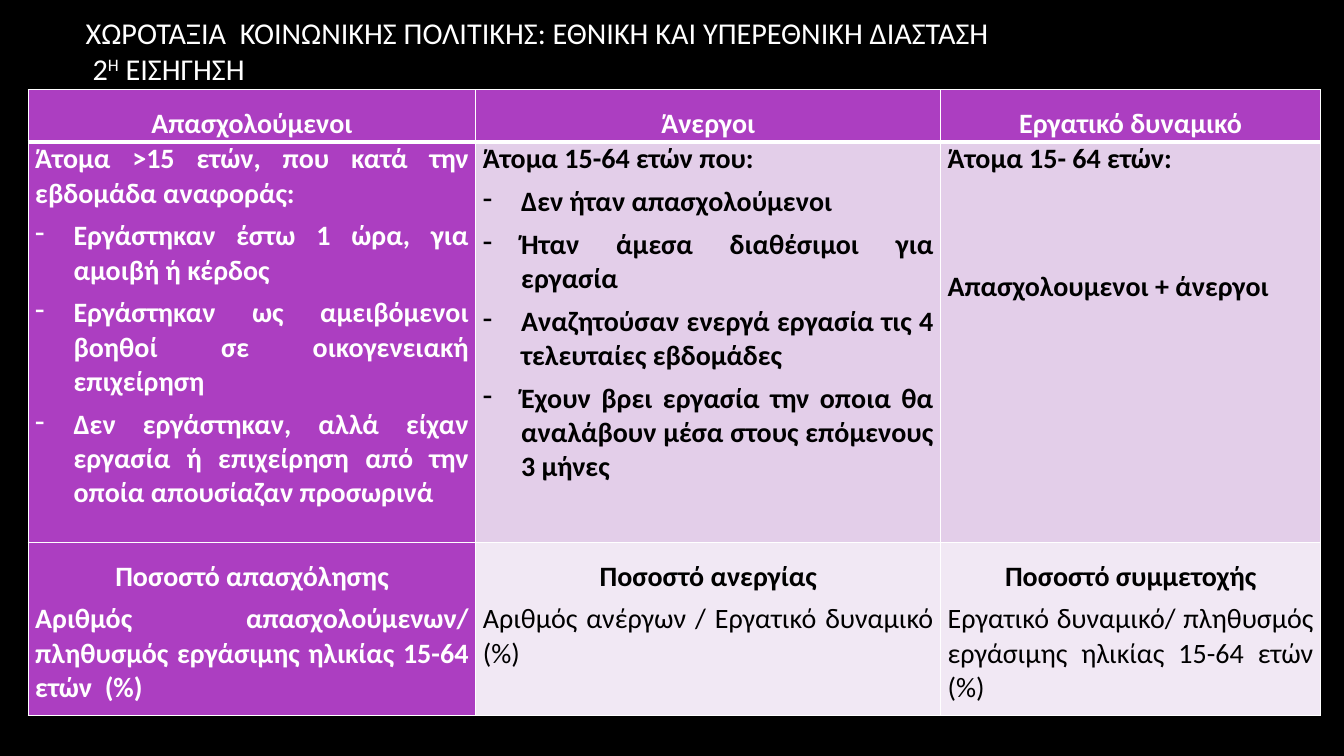
import pptx
import pptx.util
import pptx.dml.color
import pptx.enum.text
import pptx.oxml.ns
from lxml import etree
from dataclasses import dataclass

Inches, Pt = pptx.util.Inches, pptx.util.Pt
ALIGN, ANCHOR = pptx.enum.text.PP_ALIGN, pptx.enum.text.MSO_ANCHOR
qn = pptx.oxml.ns.qn


@dataclass(frozen=True)
class Theme:
    font: str = "Calibri"
    title_size: float = 21.6
    body_size: float = 20
    black: str = "000000"
    white: str = "FFFFFF"
    purple: str = "AC3EC1"
    lilac: str = "E3CEE9"
    pale: str = "F1E8F4"


T = Theme()


@dataclass(frozen=True)
class Para:
    text: str
    kind: str = "body"  # heading, body or bullet
    bold: bool = True
    before: float = 0


HEADERS = ["Απασχολούμενοι", "Άνεργοι", "Εργατικό δυναμικό"]

DEFINITIONS = [
    [Para("Άτομα >15 ετών, που κατά την εβδομάδα αναφοράς:"),
     Para("Εργάστηκαν έστω 1 ώρα, για αμοιβή ή κέρδος", "bullet"),
     Para("Εργάστηκαν ως αμειβόμενοι βοηθοί σε οικογενειακή επιχείρηση", "bullet"),
     Para("Δεν εργάστηκαν, αλλά είχαν εργασία ή επιχείρηση από την οποία "
          "απουσίαζαν προσωρινά", "bullet")],
    [Para("Άτομα 15-64 ετών που:"),
     Para("Δεν ήταν απασχολούμενοι", "bullet"),
     Para("Ήταν άμεσα διαθέσιμοι για εργασία", "bullet"),
     Para("Αναζητούσαν ενεργά εργασία τις 4 τελευταίες εβδομάδες", "bullet"),
     Para("Έχουν βρει εργασία την οποια θα αναλάβουν μέσα στους επόμενους 3 μήνες",
          "bullet")],
    [Para("Άτομα 15- 64 ετών:"),
     Para("Απασχολουμενοι + άνεργοι", before=61)],
]

RATES = [
    [Para("Ποσοστό απασχόλησης", "heading"),
     Para("Αριθμός απασχολούμενων/ πληθυσμός εργάσιμης ηλικίας 15-64 ετών  (%)")],
    [Para("Ποσοστό ανεργίας", "heading"),
     Para("Αριθμός ανέργων / Εργατικό δυναμικό (%)", bold=False)],
    [Para("Ποσοστό συμμετοχής", "heading"),
     Para("Εργατικό δυναμικό/ πληθυσμός εργάσιμης ηλικίας 15-64 ετών (%)", bold=False)],
]

ROWS = [[[Para(h, "heading")] for h in HEADERS], DEFINITIONS, RATES]
ROW_FILLS = [T.purple, T.lilac, T.pale]
COL_WIDTHS = [4.44, 4.61, 3.77]
ROW_HEIGHTS = [0.52, 3.97, 1.72]


def rgb(value):
    return pptx.dml.color.RGBColor.from_string(value)


def set_attrs(obj, values):
    for name, value in values.items():
        setattr(obj, name, value)


def style_font(font, size, color, bold=False):
    set_attrs(font, {"name": T.font, "size": Pt(size), "bold": bold})
    font.color.rgb = rgb(color)


def add_title(s, x, y, w, h):
    title = s.shapes.title
    set_attrs(title, {"left": Inches(x), "top": Inches(y),
                      "width": Inches(w), "height": Inches(h)})
    tf = title.text_frame
    set_attrs(tf, {"word_wrap": True, "vertical_anchor": ANCHOR.MIDDLE,
                   "auto_size": pptx.enum.text.MSO_AUTO_SIZE.NONE})
    p = tf.paragraphs[0]
    p.alignment = ALIGN.LEFT

    def add_run(text):
        r = p.add_run()
        r.text = text
        style_font(r.font, T.title_size, T.white)
        return r

    add_run("ΧΩΡΟΤΑΞΙΑ  ΚΟΙΝΩΝΙΚΗΣ ΠΟΛΙΤΙΚΗΣ: ΕΘΝΙΚΗ ΚΑΙ ΥΠΕΡΕΘΝΙΚΗ ΔΙΑΣΤΑΣΗ")
    p.add_line_break()
    add_run(" 2")
    add_run("Η").font._element.set("baseline", "30000")
    add_run(" ΕΙΣΗΓΗΣΗ")


def add_dash(p):
    pPr = p._p.get_or_add_pPr()
    pPr.set("marL", str(Inches(0.38)))
    pPr.set("indent", str(-Inches(0.38)))
    etree.SubElement(pPr, qn("a:buChar"), char="-")


def fill_text(tf, paras, color):
    tf.word_wrap = True
    for i, item in enumerate(paras):
        p = tf.paragraphs[0] if i == 0 else tf.add_paragraph()
        if item.kind == "bullet":
            add_dash(p)
        heading = item.kind == "heading"
        set_attrs(p, {"alignment": ALIGN.CENTER if heading else ALIGN.JUSTIFY,
                      "line_spacing": 1.5 if heading else 1.0,
                      "space_after": Pt(6)})
        if item.before:
            p.space_before = Pt(item.before)
        r = p.add_run()
        r.text = item.text
        style_font(r.font, T.body_size, color, item.bold)


def set_borders(cell, widths):
    tcPr = cell._tc.get_or_add_tcPr()
    for i, (side, width) in enumerate(widths.items()):
        ln = etree.Element(qn("a:ln" + side), w=str(Pt(width)))
        fill = etree.SubElement(ln, qn("a:solidFill"))
        etree.SubElement(fill, qn("a:srgbClr"), val=T.white)
        tcPr.insert(i, ln)


def add_labour_table(s, x, y, w, h):
    frame = s.shapes.add_table(len(ROWS), len(COL_WIDTHS),
                               Inches(x), Inches(y), Inches(w), Inches(h))
    table = frame.table
    set_attrs(table, {"first_row": False, "horz_banding": False})
    for col, width in zip(table.columns, COL_WIDTHS):
        col.width = Inches(width)
    for row, height in zip(table.rows, ROW_HEIGHTS):
        row.height = Inches(height)

    for i, row in enumerate(ROWS):
        for j, paras in enumerate(row):
            cell = table.cell(i, j)
            dark = i == 0 or j == 0
            set_attrs(cell, {"margin_left": Inches(0.07), "margin_right": Inches(0.07),
                             "margin_top": 0, "margin_bottom": 0,
                             "vertical_anchor": ANCHOR.TOP})
            cell.fill.solid()
            cell.fill.fore_color.rgb = rgb(T.purple if dark else ROW_FILLS[i])
            # The rule under the header row is thicker
            set_borders(cell, {"L": 1, "R": 1, "T": 3 if i == 1 else 1,
                               "B": 3 if i == 0 else 1})
            fill_text(cell.text_frame, paras, T.white if dark else T.black)


def main():
    prs = pptx.Presentation()
    set_attrs(prs, {"slide_width": Inches(13.33), "slide_height": Inches(7.5)})
    s = prs.slides.add_slide(prs.slide_layouts[5])
    s.background.fill.solid()
    s.background.fill.fore_color.rgb = rgb(T.black)
    add_title(s, 0.75, 0.07, 11.08, 0.86)
    add_labour_table(s, 0.28, 0.89, sum(COL_WIDTHS), sum(ROW_HEIGHTS))
    prs.save("out.pptx")


if __name__ == "__main__":
    main()
